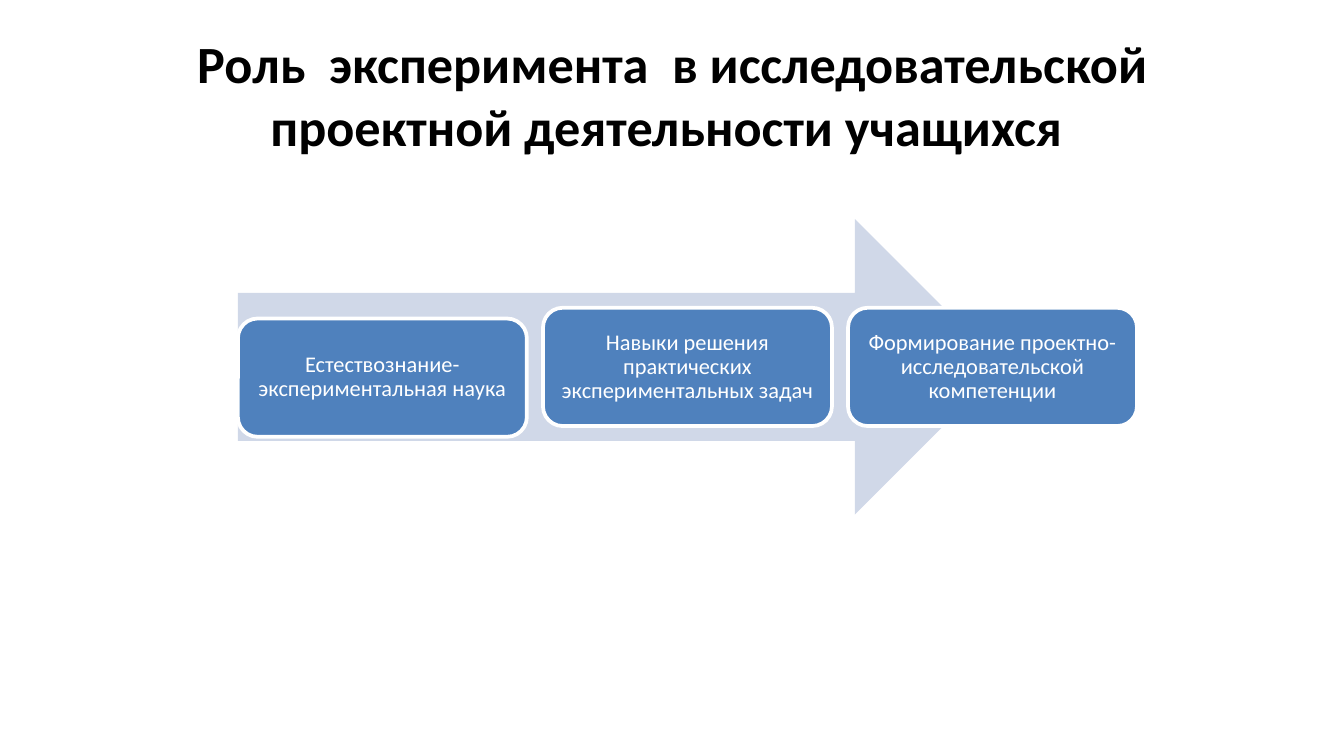
from pptx import Presentation
from pptx.dml.color import RGBColor
from pptx.enum.shapes import MSO_SHAPE as Shape
from pptx.enum.text import MSO_ANCHOR as Anchor, PP_ALIGN as Align
from pptx.util import Inches, Pt

FONT = "Calibri"
TITLE = "Роль  эксперимента  в исследовательской проектной деятельности учащихся "
STAGES = [
    ("Естествознание-экспериментальная наука", 2.37),
    ("Навыки решения практических экспериментальных задач", 2.29),
    ("Формирование проектно-исследовательской компетенции", 2.29),
]
WIDTH = 10
LEFT, STEP = 1.77, 2.27


def color(value):
    """Turn a hex string into a colour."""
    return RGBColor.from_string(value)


def write(frame, text, size, tint, bold=False, inset=0.1):
    """Put one centred run of text into a text frame."""
    frame.word_wrap = True
    frame.vertical_anchor = Anchor.MIDDLE
    frame.margin_left = frame.margin_right = Inches(inset)
    frame.margin_top = frame.margin_bottom = Inches(0.05)
    para = frame.paragraphs[0]
    para.alignment = Align.CENTER
    span = para.add_run()
    span.text = text
    span.font.name = FONT
    span.font.size = Pt(size)
    span.font.bold = bold
    span.font.color.rgb = color(tint)
    return para


def add_title(page, text):
    """Place and fill the title placeholder."""
    title = page.shapes.title
    title.left, title.top = Inches(0.5), Inches(0.23)
    title.width, title.height = Inches(9), Inches(0.94)
    write(title.text_frame, text, 28, "000000", bold=True)


def add_block(page, kind, left, top, width, height, fill):
    """Add a flat filled shape without an outline."""
    block = page.shapes.add_shape(
        kind, Inches(left), Inches(top), Inches(width), Inches(height))
    block.shadow.inherit = False
    block.fill.solid()
    block.fill.fore_color.rgb = color(fill)
    block.line.fill.background()
    return block


def add_stage(page, text, left, top):
    """Add a rounded stage box with its label."""
    box = add_block(page, Shape.ROUNDED_RECTANGLE, left, top, 2.15, 0.88, "4F81BD")
    box.line.color.rgb = color("FFFFFF")
    box.line.width = Pt(2)
    para = write(box.text_frame, text, 12, "FFFFFF", inset=0.09)
    para.line_spacing = 0.9


def main():
    """Build the slide and save it."""
    deck = Presentation()
    deck.slide_width, deck.slide_height = Inches(WIDTH), Inches(WIDTH * 9 / 16)
    page = deck.slides.add_slide(deck.slide_layouts[5])
    add_title(page, TITLE)
    add_block(page, Shape.RIGHT_ARROW, LEFT, 1.63, 5.69, 2.2, "D0D8E8")
    for index, (text, top) in enumerate(STAGES):
        add_stage(page, text, LEFT + index * STEP, top)
    deck.save("out.pptx")


if __name__ == "__main__":
    main()
